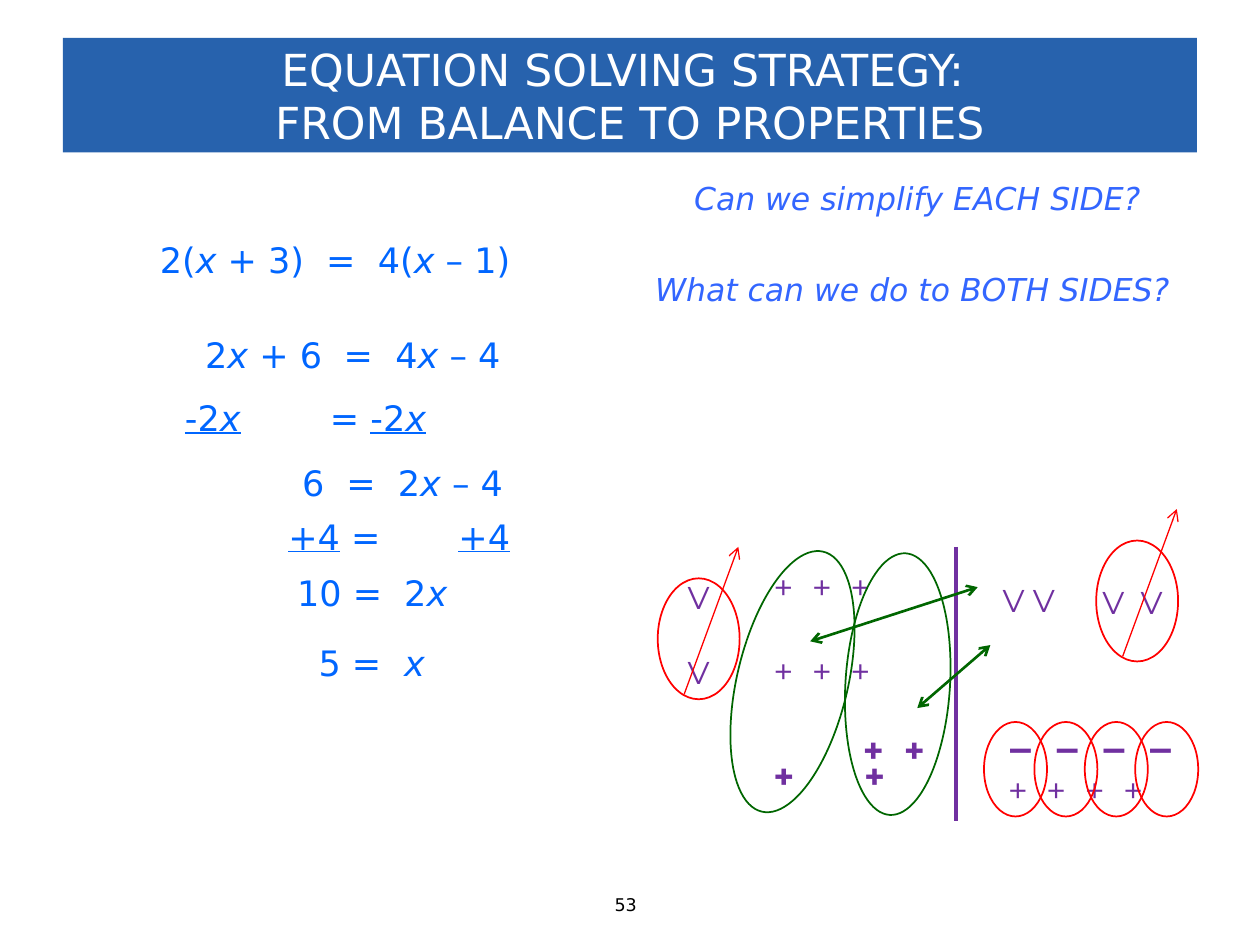
import pptx
import pptx.util
import pptx.dml.color
import pptx.enum.shapes
import pptx.enum.text
import pptx.oxml
import pptx.oxml.ns
from lxml import etree

Inches = pptx.util.Inches
Pt = pptx.util.Pt
SHAPE = pptx.enum.shapes.MSO_SHAPE
ALIGN = pptx.enum.text.PP_ALIGN
BLUE, PURPLE, RED, GREEN = "0066FF", "7030A0", "FF0000", "006600"
SANS, MONT = "DejaVu Sans", "Montserrat"


def color(code):
    return pptx.dml.color.RGBColor.from_string(code)


def sub(parent, tag, **attrs):
    return etree.SubElement(parent, pptx.oxml.ns.qn(tag), attrs)


def style(font, name, size, code, bold=False, italic=None):
    font.name, font.size, font.bold, font.italic = name, Pt(size), bold, italic
    font.color.rgb = color(code)


def add_tabs(para, stops):
    """Set left tab stops, in inches from the start of the text."""
    if stops:
        tabs = sub(para._p.get_or_add_pPr(), "a:tabLst")
        for stop in stops:
            sub(tabs, "a:tab", pos=str(Inches(stop)), algn="l")


def add_text(slide, box, lines, name, size, code, stops=(), gap=0, **look):
    """Place lines of text; _ toggles underline and * toggles italic."""
    left, top, width, height = box
    frame = slide.shapes.add_textbox(
        Inches(left), Inches(top), Inches(width), Inches(height)).text_frame
    frame.word_wrap = True
    for i, line in enumerate(lines):
        para = frame.paragraphs[0] if i == 0 else frame.add_paragraph()
        if i:
            para.space_before = Pt(gap)
        add_tabs(para, stops)
        style(para.font, name, size, code, **look)
        for j, under in enumerate(line.split("_")):
            for k, part in enumerate(under.split("*")):
                if part:
                    run = para.add_run()
                    run.text = part
                    if j % 2:
                        run.font.underline = True
                    if k % 2:
                        run.font.italic = True
    return frame


def add_oval(shapes, left, top, width, height, code, turn=0):
    oval = shapes.add_shape(SHAPE.OVAL, Inches(left), Inches(top),
                            Inches(width), Inches(height))
    oval.shadow.inherit = False
    oval.fill.background()
    oval.line.color.rgb = color(code)
    oval.line.width = Pt(1)
    oval.rotation = turn


def add_line(shapes, start, end, code, width, ends=()):
    line = shapes.add_connector(
        pptx.enum.shapes.MSO_CONNECTOR.STRAIGHT,
        *(Inches(value) for value in (*start, *end)))
    line.line.color.rgb = color(code)
    line.line.width = Pt(width)
    for end_tag in ends:
        sub(line.line._get_or_add_ln(), end_tag, type="arrow")
    sub(line._element.spPr, "a:effectLst")


def add_title(slide, left, top, width, height):
    bar = slide.shapes.add_shape(SHAPE.RECTANGLE, Inches(left), Inches(top),
                                 Inches(width), Inches(height))
    bar.shadow.inherit = False
    bar.fill.solid()
    bar.fill.fore_color.rgb = color("2762AD")
    bar.line.fill.background()
    frame = bar.text_frame
    frame.word_wrap = True
    frame.vertical_anchor = pptx.enum.text.MSO_ANCHOR.MIDDLE
    para = frame.paragraphs[0]
    para.text = "EQUATION SOLVING STRATEGY: \vFROM BALANCE TO PROPERTIES"
    para.alignment = ALIGN.CENTER
    style(para.font, SANS, 25.2, "FFFFFF")


def add_steps(slide, left, top):
    """Worked solution: offset right, offset down, tab stops, text."""
    steps = [
        (0.15, 0, (1.32, 1.73), "2(*x + *3)\t=\t4(*x* – 1)"),
        (0.51, 0.76, (1.1, 1.51), "2*x + *6\t=\t4*x* – 4"),
        (0.35, 1.26, (1.15,), "_-2*x*_\t= _-2*x*_"),
        (1.28, 1.77, (0.35, 0.76), "6\t=\t2*x* – 4"),
        (1.17, 2.2, (1.35,), "_+4_ =\t_+4_"),
        (1.24, 2.65, (0.85,), "10 =\t2*x*"),
        (1.41, 3.2, (0.68,), "5 =\t*x*"),
    ]
    for right, down, stops, text in steps:
        add_text(slide, (left + right, top + down, 3.2, 0.44), [text],
                 SANS, 20, BLUE, stops)


def add_prompts(slide, left, top):
    for right, down, text in [(0.31, 0, "Can we simplify EACH SIDE?"),
                              (0, 0.72, "What can we do to BOTH SIDES?")]:
        add_text(slide, (left + right, top + down, 4.49, 0.4), [text],
                 SANS, 18, "3366FF", italic=True)


def add_strike(slide, left, top):
    """Ring a pair of tiles and strike it out with an arrow."""
    shapes = slide.shapes.add_group_shape().shapes
    add_oval(shapes, left, top, 0.65, 0.96, RED)
    add_line(shapes, (left + 0.21, top + 0.92), (left + 0.64, top - 0.25),
             RED, 0.75, ["a:tailEnd"])


def add_model(slide, left, top):
    """Balance model: tiles, divider, rings and arrows."""
    shapes = slide.shapes

    def tiles(right, down, width, lines, size=20, pitch=0.305, name=MONT,
              gap=0, bold=False):
        stops = [pitch * (i + 1) for i in range(lines[0].count("\t"))]
        add_text(slide, (left + right, top + down, width, 0.44), lines,
                 name, size, PURPLE, stops, gap, bold=bold)

    # Tiles on the left side
    tiles(0.14, 0.5, 0.51, ["V", "V"], 18, gap=21)
    tiles(0.82, 0.4, 1.19, ["+\t+\t+"] * 2, gap=24)
    tiles(0.82, 1.9, 1.23, ["+\t+"], pitch=0.72, bold=True)
    tiles(1.53, 1.69, 0.76, ["+\t+"], pitch=0.325, bold=True)

    # Tiles on the right side
    tiles(2.64, 0.52, 0.83, ["V V"], 18)
    tiles(3.43, 0.54, 0.9, ["V\tV"], 18)
    tiles(2.69, 1.63, 1.7, ["–\t–\t–\t–"], 24, 0.37, "Arial", bold=True)
    tiles(2.68, 2.01, 1.59, ["+\t+\t+\t+"])

    # Divider between the two sides
    mid = left + 2.37
    add_line(shapes, (mid, top + 0.3), (mid, top + 2.48), PURPLE, 2.25)

    # Removed variables and zero pairs
    add_strike(slide, left, top + 0.55)
    add_strike(slide, left + 3.48, top + 0.25)
    for i in range(4):
        add_oval(shapes, left + 2.59 + 0.4 * i, top + 1.69, 0.5, 0.75, RED)

    # Equal groups matched with the variables
    add_oval(shapes, left + 0.63, top + 0.31, 0.88, 2.12, GREEN, 13.3)
    add_oval(shapes, left + 1.49, top + 0.35, 0.83, 2.08, GREEN, 3.5)
    both = ["a:headEnd", "a:tailEnd"]
    for x1, y1, x2, y2 in [(1.21, 1.05, 2.54, 0.62), (2.64, 1.08, 2.06, 1.58)]:
        add_line(shapes, (left + x1, top + y1), (left + x2, top + y2),
                 GREEN, 1.5, both)


def add_number(slide, left, top):
    frame = add_text(slide, (left, top, 0.44, 0.27), ["53"],
                     SANS, 10, "000000")
    frame.paragraphs[0].alignment = ALIGN.LEFT


def main():
    deck = pptx.Presentation()
    deck.slide_width, deck.slide_height = Inches(10), Inches(7.5)
    slide = deck.slides.add_slide(deck.slide_layouts[6])
    add_title(slide, 0.5, 0.3, 9, 0.91)
    add_steps(slide, 1.02, 1.84)
    add_prompts(slide, 5.1, 1.37)
    add_model(slide, 5.22, 4.04)
    add_number(slide, 4.78, 7.05)
    deck.save("out.pptx")


if __name__ == "__main__":
    main()
